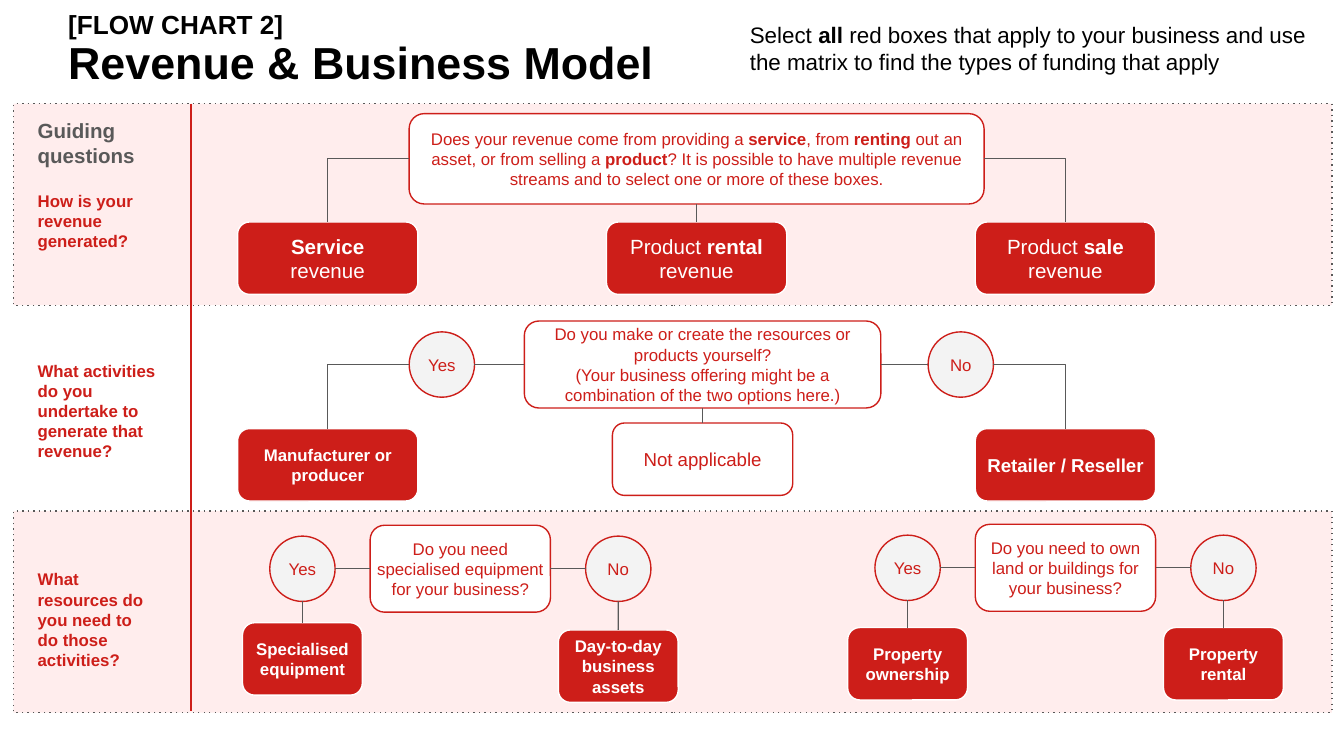
import pptx
import pptx.util
import pptx.dml.color
import pptx.enum.dml
import pptx.enum.shapes
import pptx.enum.text
import lxml.etree

Pt = pptx.util.Pt
colour = pptx.dml.color.RGBColor.from_string
shape_kind = pptx.enum.shapes.MSO_SHAPE
line_kind = pptx.enum.shapes.MSO_CONNECTOR
align = pptx.enum.text.PP_ALIGN
RED, GREY, WHITE, BLACK = "CD1E19", "595959", "FFFFFF", "000000"
DRAWING = "{http://schemas.openxmlformats.org/drawingml/2006/main}"

deck = pptx.Presentation()
deck.slide_width, deck.slide_height = Pt(720), Pt(405)
page = deck.slides.add_slide(deck.slide_layouts[6])


def write(box, paragraphs, ink, alignment, side_inset):
    frame = box.text_frame
    frame.word_wrap = True
    frame.margin_left = frame.margin_right = Pt(side_inset)
    frame.margin_top = frame.margin_bottom = Pt(7.2)
    for index, (text, size) in enumerate(paragraphs):
        para = frame.add_paragraph() if index else frame.paragraphs[0]
        para.alignment = alignment
        for part, words in enumerate(text.split("*")):
            if words:
                span = para.add_run()
                span.text = words
                span.font.name = "Arial"
                span.font.size = Pt(size)
                span.font.bold = part % 2 == 1
                span.font.color.rgb = colour(ink)


def draw_line(kind, x1, y1, x2, y2, ink):
    line = page.shapes.add_connector(kind, Pt(x1), Pt(y1), Pt(x2), Pt(y2))
    line.line.color.rgb = colour(ink)
    line.line.width = Pt(0.75)
    lxml.etree.SubElement(line._element.spPr, DRAWING + "effectLst")
    return line


for top in (55.6, 273.8):
    band = page.shapes.add_shape(shape_kind.RECTANGLE, Pt(7.2), Pt(top), Pt(706.3), Pt(108))
    band.shadow.inherit = False
    band.fill.solid()
    band.fill.fore_color.rgb = colour("FF0000")
    tint = band._element.spPr.find(f"{DRAWING}solidFill/{DRAWING}srgbClr")
    lxml.etree.SubElement(tint, DRAWING + "alpha", val="7000")
    band.line.color.rgb = colour(GREY)
    band.line.width = Pt(0.75)
    band.line.dash_style = pptx.enum.dml.MSO_LINE.ROUND_DOT
    band._element.spPr.find(f".//{DRAWING}prstDash").set("val", "dot")

styles = {
    "question": (shape_kind.ROUNDED_RECTANGLE, WHITE, RED, RED),
    "circle": (shape_kind.OVAL, "F3F3F3", RED, RED),
    "answer": (shape_kind.ROUNDED_RECTANGLE, RED, WHITE, WHITE),
}

WIDE, TALL, ROUND, SMALL = 96.6, 38.8, 35, 64.2
left_column, middle_column, right_column = 175.6, 373.2, 570.8
second_middle = 376.4

nodes = [
    ("revenue", "question", middle_column, 85.1, 308, 48.4, 0,
     [("Does your revenue come from providing a *service*, from *renting *out an asset, or from "
       "selling a *product*? It is possible to have multiple revenue streams and to select one "
       "or more of these boxes.", 9)]),
    ("service", "answer", left_column, 138.3, WIDE, TALL, 7.2, [("*Service *revenue", 11)]),
    ("rental", "answer", middle_column, 138.3, WIDE, TALL, 7.2, [("Product *rental *revenue", 11)]),
    ("sale", "answer", right_column, 138.3, WIDE, TALL, 7.2, [("Product *sale *revenue", 11)]),
    ("activity", "question", second_middle, 195.3, 191, 46.6, 0,
     [("Do you make or create the resources or products yourself?", 9),
      ("(Your business offering might be a combination of the two options here.)", 9)]),
    ("make yes", "circle", 236.7, 195.3, ROUND, ROUND, 0, [("Yes", 9)]),
    ("make no", "circle", 514.7, 195.3, ROUND, ROUND, 0, [("No", 9)]),
    ("maker", "answer", left_column, 249, WIDE, TALL, 0, [("*Manufacturer or producer*", 9)]),
    ("not applicable", "question", second_middle, 246, WIDE, TALL, 0, [("Not applicable", 10)]),
    ("retailer", "answer", right_column, 249, WIDE, TALL, 0, [("*Retailer / Reseller*", 10)]),
]
links = [
    ("revenue", 1, "service", 0), ("revenue", 2, "rental", 0), ("revenue", 3, "sale", 0),
    ("activity", 1, "make yes", 3), ("activity", 3, "make no", 1), ("activity", 2, "not applicable", 0),
    ("make yes", 1, "maker", 0), ("make no", 3, "retailer", 0),
]

resources = [
    ("equipment", 246.6, 304.7, "Do you need specialised equipment for your business?",
     ("Specialised equipment", 353), ("Day-to-day business assets", 356.9)),
    ("property", right_column, 304.2, "Do you need to own land or buildings for your business?",
     ("Property ownership", 355.6), ("Property rental", 355.6)),
]
for topic, centre, middle, question, yes_result, no_result in resources:
    nodes.append((topic, "question", centre, middle, WIDE, 46.6, 0, [(question, 9)]))
    for reply, side, (result, result_middle) in (("Yes", 1, yes_result), ("No", 3, no_result)):
        reply_centre = centre + (side - 2) * 84.6
        reply_name = f"{topic} {reply}"
        nodes.append((reply_name, "circle", reply_centre, middle, ROUND, ROUND, 0, [(reply, 9)]))
        nodes.append((result, "answer", reply_centre, result_middle, SMALL, TALL, 0, [(f"*{result}*", 9)]))
        links += [(topic, side, reply_name, 4 - side), (reply_name, 2, result, 0)]

boxes = {}
for name, style, centre, middle, width, height, inset, paragraphs in nodes:
    kind, fill, outline, ink = styles[style]
    box = page.shapes.add_shape(kind, Pt(centre - width / 2), Pt(middle - height / 2), Pt(width), Pt(height))
    box.shadow.inherit = False
    box.fill.solid()
    box.fill.fore_color.rgb = colour(fill)
    box.line.color.rgb = colour(outline)
    box.line.width = Pt(0.75)
    box.text_frame.vertical_anchor = pptx.enum.text.MSO_ANCHOR.MIDDLE
    write(box, paragraphs, ink, align.CENTER, inset)
    boxes[name] = box

for start, start_side, end, end_side in links:
    bent = start_side != 2 and end_side == 0
    line = draw_line(line_kind.ELBOW if bent else line_kind.STRAIGHT, 0, 0, 0, 0, GREY)
    line.begin_connect(boxes[start], start_side)
    line.end_connect(boxes[end], end_side)
    if bent:
        line._element.spPr.find(DRAWING + "prstGeom").set("prst", "bentConnector2")
    for name, side, tag in ((start, start_side, "stCxn"), (end, end_side, "endCxn")):
        if boxes[name].auto_shape_type == shape_kind.OVAL:
            line._element.find(f".//{DRAWING}{tag}").set("idx", str(side * 2))

draw_line(line_kind.STRAIGHT, 102.4, 55.6, 102.4, 381, RED)

labels = [
    (394.6, 4.3, 318.2, 43.9, BLACK,
     [("Select *all* red boxes that apply to your business and use the matrix to find the types "
       "of funding that apply", 12)]),
    (13.1, 56.2, 83.5, 41, GREY, [("*Guiding questions*", 11)]),
    (13.1, 95, 69.8, 47.5, RED, [("*How is your revenue generated?*", 9)]),
    (13.1, 185.8, 83.5, 69.1, RED, [("*What activities do you undertake to generate that revenue?*", 9)]),
    (13.1, 297.7, 75.6, 69.1, RED, [("*What resources do you need to do those activities?*", 9)]),
]
for left, top, width, height, ink, paragraphs in labels:
    label = page.shapes.add_textbox(Pt(left), Pt(top), Pt(width), Pt(height))
    label.text_frame.auto_size = pptx.enum.text.MSO_AUTO_SIZE.SHAPE_TO_FIT_TEXT
    write(label, paragraphs, ink, align.LEFT, 7.2)

title = page.shapes.add_textbox(Pt(29.4), Pt(-0.7), Pt(502.6), Pt(56.9))
write(title, [("*[FLOW CHART 2]*", 14), ("*Revenue & Business Model*", 24)], BLACK, align.LEFT, 7.2)
for para in title.text_frame.paragraphs:
    para.line_spacing = 0.9

deck.save("out.pptx")
